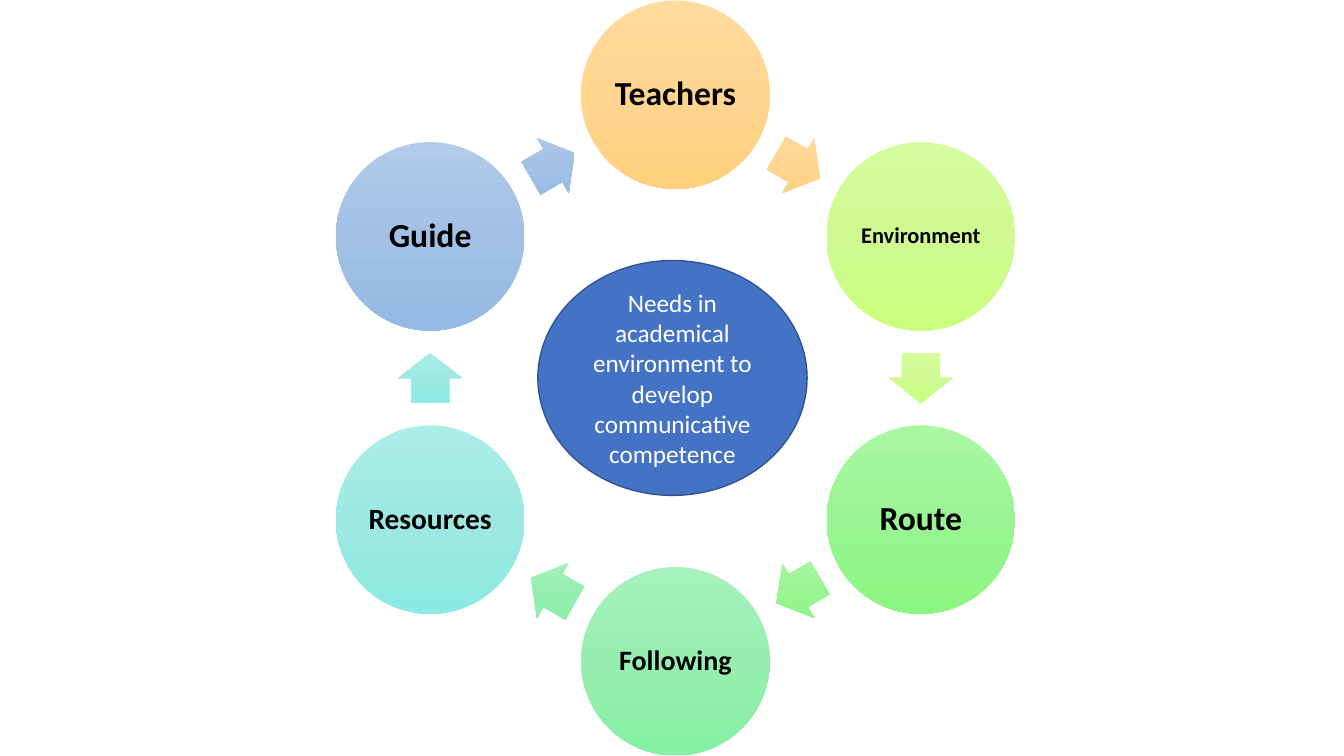
from copy import deepcopy
from math import cos, radians, sin

from pptx import Presentation
from pptx.dml.color import RGBColor
from pptx.enum.shapes import MSO_SHAPE
from pptx.enum.text import MSO_ANCHOR, PP_ALIGN
from pptx.oxml.ns import qn
from pptx.util import Inches, Pt

ELLIPSE, ARROW = MSO_SHAPE.OVAL, MSO_SHAPE.RIGHT_ARROW
CENTER, MIDDLE = PP_ALIGN.CENTER, MSO_ANCHOR.MIDDLE

BLACK = RGBColor(0x00, 0x00, 0x00)
WHITE = RGBColor(0xFF, 0xFF, 0xFF)
BLUE = RGBColor(0x44, 0x72, 0xC4)
DARK_BLUE = RGBColor(0x32, 0x54, 0x91)
ORANGE = (RGBColor(0xFF, 0xDB, 0x9E), RGBColor(0xFF, 0xD5, 0x90), RGBColor(0xFF, 0xD0, 0x7C))
LIME = (RGBColor(0xD5, 0xFC, 0x9F), RGBColor(0xCE, 0xFA, 0x91), RGBColor(0xCA, 0xFF, 0x7D))
GREEN = (RGBColor(0xA9, 0xF7, 0xA2), RGBColor(0x9B, 0xF4, 0x94), RGBColor(0x89, 0xF7, 0x80))
MINT = (RGBColor(0xA6, 0xF2, 0xBC), RGBColor(0x98, 0xEE, 0xB0), RGBColor(0x84, 0xF0, 0xA4))
TEAL = (RGBColor(0xAB, 0xED, 0xE7), RGBColor(0x9D, 0xE9, 0xE2), RGBColor(0x8B, 0xEA, 0xE2))
SKY = (RGBColor(0xB1, 0xCB, 0xE9), RGBColor(0xA3, 0xC1, 0xE5), RGBColor(0x93, 0xB9, 0xE4))

# Label, text size, text inset and gradient, clockwise from the top
STEPS = [
    ("Teachers", 24, 0.03, ORANGE),
    ("Environment", 16, 0.02, LIME),
    ("Route", 24, 0.03, GREEN),
    ("Following", 20, 0.03, MINT),
    ("Resources", 21, 0.03, TEAL),
    ("Guide", 24, 0.03, SKY),
]
RING_X, RING_Y, RADIUS = 6.7, 3.75, 2.81
CIRCLE = 1.87
ARROW_LENGTH, ARROW_WIDTH = 0.5, 0.63


class CyclePage:
    def __init__(self, page, font="Calibri"):
        self.page = page
        self.font = font

    def shape(self, kind, x, y, width, height):
        """Add a shape centred on x, y."""
        shape = self.page.shapes.add_shape(
            kind, Inches(x - width / 2), Inches(y - height / 2), Inches(width), Inches(height))
        shape.shadow.inherit = False
        shape.line.fill.background()
        return shape

    def gradient(self, shape, colors):
        """Fill from top to bottom, whatever the rotation of the shape."""
        fill = shape.fill
        fill.gradient()
        fill.gradient_angle = 270
        element = shape._element.spPr.find(qn("a:gradFill"))
        element.set("rotWithShape", "0")
        stops = element.find(qn("a:gsLst"))
        stops.insert(1, deepcopy(stops[0]))
        for stop, color, position in zip(fill.gradient_stops, colors, (0, 0.5, 1)):
            stop.color.rgb = color
            stop.position = position

    def label(self, shape, text, size, color, bold=False):
        frame = shape.text_frame
        frame.word_wrap = True
        frame.vertical_anchor = MIDDLE
        frame.text = text
        para = frame.paragraphs[0]
        para.alignment = CENTER
        font = para.runs[0].font
        font.name, font.size, font.bold = self.font, Pt(size), bold
        font.color.rgb = color
        return frame

    def step(self, x, y, text, size, inset, colors):
        circle = self.shape(ELLIPSE, x, y, CIRCLE, CIRCLE)
        self.gradient(circle, colors)
        frame = self.label(circle, text, size, BLACK, bold=True)
        frame.margin_left = frame.margin_right = Inches(inset)
        frame.margin_top = frame.margin_bottom = Inches(inset)
        frame.paragraphs[0].line_spacing = 0.9

    def arrow(self, x, y, rotation, colors):
        arrow = self.shape(ARROW, x, y, ARROW_LENGTH, ARROW_WIDTH)
        arrow.adjustments[0], arrow.adjustments[1] = 0.6, 0.5
        arrow.rotation = rotation
        self.gradient(arrow, colors)

    def hub(self, x, y, width, height, text):
        hub = self.shape(ELLIPSE, x, y, width, height)
        hub.fill.solid()
        hub.fill.fore_color.rgb = BLUE
        hub.line.color.rgb = DARK_BLUE
        hub.line.width = Pt(1)
        self.label(hub, text, 18, WHITE)


def ring_point(angle, radius):
    """Point on the ring, with the angle clockwise from the top."""
    turn = radians(angle)
    return RING_X + radius * sin(turn), RING_Y - radius * cos(turn)


def main():
    deck = Presentation()
    deck.slide_width, deck.slide_height = Inches(13.33), Inches(7.5)
    cycle = CyclePage(deck.slides.add_slide(deck.slide_layouts[6]))

    # Ring of steps, each with an arrow halfway to the next
    spacing = 360 / len(STEPS)
    half = spacing / 2
    for index, (text, size, inset, colors) in enumerate(STEPS):
        angle = index * spacing
        cycle.step(*ring_point(angle, RADIUS), text, size, inset, colors)
        middle = ring_point(angle + half, RADIUS * cos(radians(half)))
        cycle.arrow(*middle, angle + half, colors)

    # Theme in the middle
    cycle.hub(6.67, 3.75, 2.67, 2.33,
              "Needs in academical environment to develop communicative competence")

    deck.save("out.pptx")


if __name__ == "__main__":
    main()
